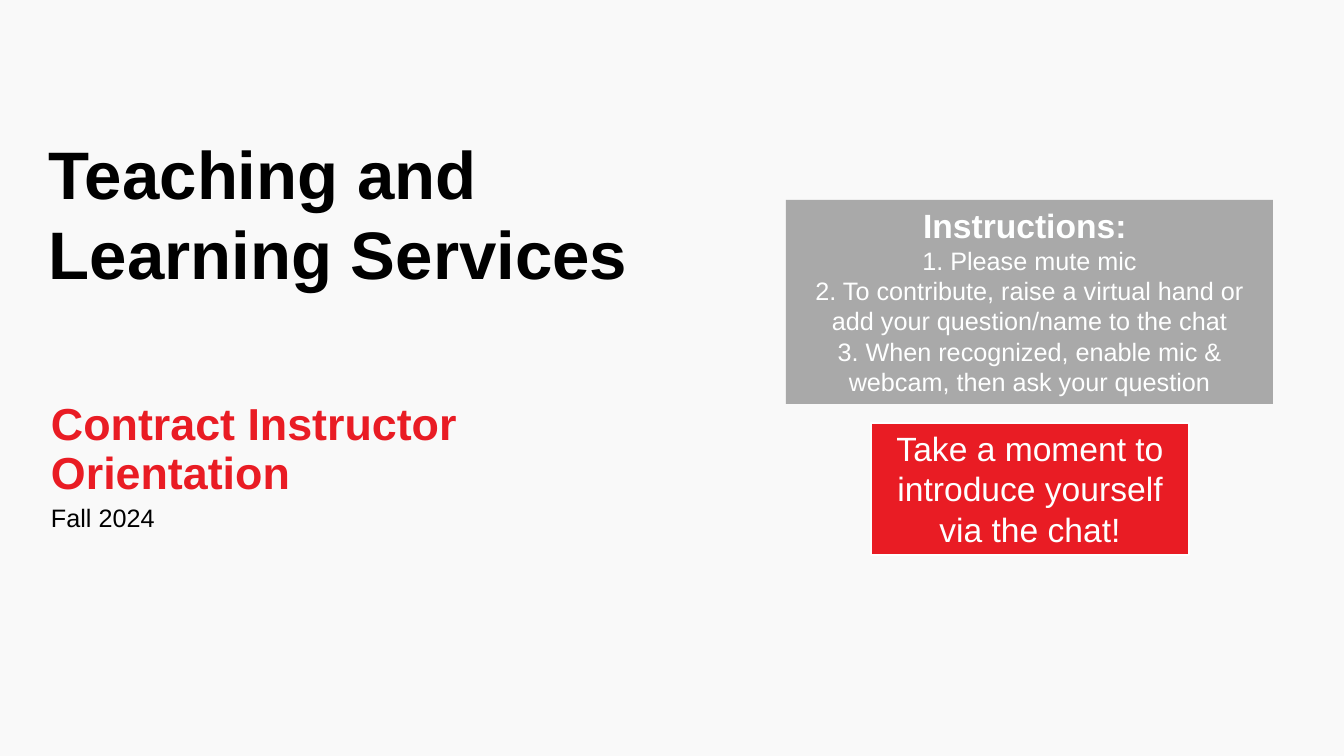
from pptx import Presentation
from pptx.dml.color import RGBColor
from pptx.enum.shapes import MSO_SHAPE
from pptx.enum.text import MSO_ANCHOR, PP_ALIGN
from pptx.util import Pt

PX = 914400 / 100.8
HUES = {"back": "F9F9F9", "ink": "000000", "red": "E91C24",
        "gray": "A9A9A9", "white": "FEFFFF"}


def hue(name):
    return RGBColor.from_string(HUES[name])


def apply(item, **values):
    for key, value in values.items():
        setattr(item, key, value)


class Deck:
    """Hold the style and the current slide."""

    font = "Arial"

    def __init__(self, wide, high):
        self.show = Presentation()
        apply(self.show, slide_width=self.size(wide), slide_height=self.size(high))
        self.page = self.show.slides.add_slide(self.show.slide_layouts[6])
        fill = self.page.background.fill
        fill.solid()
        fill.fore_color.rgb = hue("back")

    def size(self, px):
        return round(px * PX)

    def set_text(self, frame, lines, color, frame_style, line_style):
        apply(frame, word_wrap=True, **frame_style)
        for n, (text, points, bold) in enumerate(lines):
            line = frame.add_paragraph() if n else frame.paragraphs[0]
            apply(line, **line_style)
            run = line.add_run()
            run.text = text
            apply(run.font, name=self.font, size=Pt(points), bold=bold)
            run.font.color.rgb = hue(color)

    def text(self, box, line, color, flush=True, anchor=MSO_ANCHOR.TOP):
        shape = self.page.shapes.add_textbox(*map(self.size, box))
        style = {"vertical_anchor": anchor}
        if flush:
            sides = ("left", "top", "right", "bottom")
            style.update({f"margin_{side}": 0 for side in sides})
        spacing = {"line_spacing": 0.9} if flush else {}
        self.set_text(shape.text_frame, [line], color, style, spacing)

    def panel(self, box, lines, fill, edge=None):
        shape = self.page.shapes.add_shape(MSO_SHAPE.RECTANGLE, *map(self.size, box))
        shape.shadow.inherit = False
        shape.fill.solid()
        shape.fill.fore_color.rgb = hue(fill)
        if edge:
            shape.line.color.rgb = hue(edge)
            shape.line.width = Pt(1.5)
        else:
            shape.line.fill.background()
        self.set_text(shape.text_frame, lines, "white",
                      {"vertical_anchor": MSO_ANCHOR.TOP},
                      {"alignment": PP_ALIGN.CENTER})

    def save(self):
        self.show.save("out.pptx")


def main():
    deck = Deck(1344, 756)
    deck.text((39, 127, 615, 173), ("Teaching and Learning Services", 48, True),
              "ink", flush=False)
    deck.text((51, 301, 630, 198), ("Contract Instructor Orientation", 32, True),
              "red", anchor=MSO_ANCHOR.BOTTOM)
    deck.text((51, 506, 630, 137), ("Fall 2024", 18, False), "ink")
    steps = ["1. Please mute mic",
             "2. To contribute, raise a virtual hand or add your question/name to the chat",
             "3. When recognized, enable mic & webcam, then ask your question"]
    deck.panel((786, 200, 487, 204),
               [("Instructions: ", 24, True)] + [(step, 18, False) for step in steps],
               "gray")
    deck.panel((871, 423, 318, 132),
               [("Take a moment to introduce yourself via the chat!", 24, False)],
               "red", edge="white")
    deck.save()


if __name__ == "__main__":
    main()
